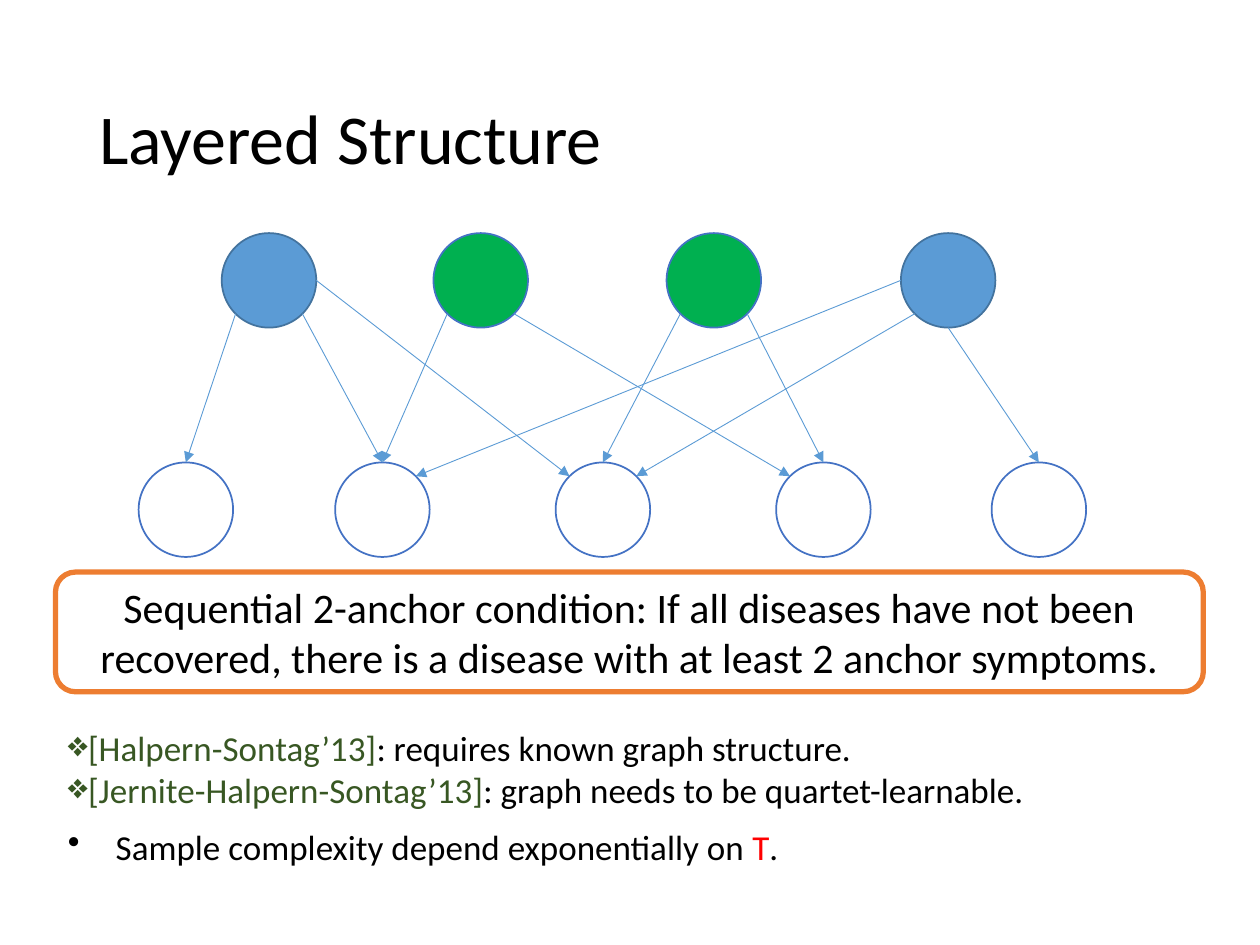
from math import cos, radians, sin

from lxml import etree
from pptx import Presentation
from pptx.dml.color import RGBColor
from pptx.enum import shapes, text
from pptx.oxml.ns import qn
from pptx.util import Inches, Pt

COLORS = {
    "black": "000000", "white": "FFFFFF", "blue": "5B9BD5",
    "dark_blue": "43739E", "outline": "4472C4", "green": "00B050",
    "orange": "ED7D31", "citation": "385723", "red": "FF0000",
}
FONT = "Calibri"

TITLE = "Layered Structure"
CONDITION = ("Sequential 2-anchor condition: If all diseases have not been "
             "recovered, there is a disease with at least 2 anchor symptoms.")
RELATED_WORK = [
    [("[Halpern-Sontag’13]", "citation"),
     (": requires known graph structure.", "black")],
    [("[Jernite-Halpern-Sontag’13]", "citation"),
     (": graph needs to be quartet-learnable.", "black")],
]
COMPLEXITY = [[("Sample complexity depend exponentially on ", "black"),
               ("T", "red"), (".", "black")]]

# Circles: left edge, fill, outline
DIAMETER = 0.75
DISEASE_TOP, SYMPTOM_TOP = 1.85, 3.67
DISEASES = [(1.76, "blue", "dark_blue"), (3.44, "green", "outline"),
            (5.29, "green", "outline"), (7.15, "blue", "dark_blue")]
SYMPTOMS = [(left, "white", "outline") for left in (1.1, 2.66, 4.41, 6.16, 7.87)]

# Points on a circle, in degrees clockwise from the right
ANGLES = {"right": 0, "lower right": 45, "bottom": 90, "lower left": 135,
          "left": 180, "upper left": 225, "top": 270, "upper right": 315}
# Disease, where the arrow leaves, symptom, where it arrives
EDGES = [
    (0, "lower left", 0, "top"), (0, "lower right", 1, "top"),
    (0, "right", 2, "upper left"), (1, "lower left", 1, "top"),
    (1, "lower right", 3, "upper left"), (2, "lower right", 3, "top"),
    (3, "lower left", 2, "upper right"), (3, "bottom", 4, "top"),
    (3, "left", 1, "upper right"), (2, "lower left", 2, "top"),
]


def color(name):
    return RGBColor.from_string(COLORS[name])


def inches(*values):
    return [Inches(value) for value in values]


def set_font(para, size):
    para.font.name = FONT
    para.font.size = Pt(size)
    para.font.color.rgb = color("black")


def add_outlined(page, kind, place, fill, line, width):
    shape = page.shapes.add_shape(kind, *inches(*place))
    shape.shadow.inherit = False
    shape.fill.solid()
    shape.fill.fore_color.rgb = color(fill)
    shape.line.color.rgb = color(line)
    shape.line.width = Pt(width)
    return shape


def add_circles(page, circles, top):
    for left, fill, line in circles:
        add_outlined(page, shapes.MSO_SHAPE.OVAL,
                     (left, top, DIAMETER, DIAMETER), fill, line, 1)


def rim_point(left, top, side):
    angle, radius = radians(ANGLES[side]), DIAMETER / 2
    return inches(left + radius * (1 + cos(angle)), top + radius * (1 + sin(angle)))


def add_arrow(page, start, end):
    arrow = page.shapes.add_connector(shapes.MSO_CONNECTOR.STRAIGHT, *start, *end)
    arrow.line.color.rgb = color("blue")
    arrow.line.width = Pt(0.5)
    etree.SubElement(arrow.line._get_or_add_ln(), qn("a:tailEnd"), type="triangle")
    etree.SubElement(arrow._element.spPr, qn("a:effectLst"))


def add_bullets(page, place, lines, bullet, indent=0.0, wrap=True):
    box = page.shapes.add_textbox(*inches(*place))
    frame = box.text_frame
    frame.word_wrap = wrap
    frame.auto_size = text.MSO_AUTO_SIZE.SHAPE_TO_FIT_TEXT
    for index, spans in enumerate(lines):
        para = frame.add_paragraph() if index else frame.paragraphs[0]
        set_font(para, 20)
        for words, name in spans:
            span = para.add_run()
            span.text = words
            span.font.color.rgb = color(name)
        properties = para._p.get_or_add_pPr()
        properties.set("marL", str(Inches(indent)))
        properties.set("indent", str(-Inches(indent)))
        mark = etree.Element(qn("a:buChar"), char=bullet)
        properties.insert(0, mark)


def main():
    deck = Presentation()
    deck.slide_width, deck.slide_height = inches(10, 7.5)
    page = deck.slides.add_slide(deck.slide_layouts[6])

    title = page.shapes.add_textbox(*inches(0.69, 0.4, 8.62, 1.45)).text_frame
    title.word_wrap = True
    title.vertical_anchor = text.MSO_ANCHOR.MIDDLE
    title.text = TITLE
    title.paragraphs[0].line_spacing = 0.9
    set_font(title.paragraphs[0], 40)

    add_circles(page, DISEASES, DISEASE_TOP)
    add_circles(page, SYMPTOMS, SYMPTOM_TOP)
    for disease, leaves, symptom, arrives in EDGES:
        add_arrow(page, rim_point(DISEASES[disease][0], DISEASE_TOP, leaves),
                  rim_point(SYMPTOMS[symptom][0], SYMPTOM_TOP, arrives))

    condition = add_outlined(page, shapes.MSO_SHAPE.ROUNDED_RECTANGLE,
                             (0.44, 4.54, 9.11, 0.95), "white", "orange", 3).text_frame
    condition.word_wrap = True
    condition.vertical_anchor = text.MSO_ANCHOR.MIDDLE
    condition.text = CONDITION
    condition.paragraphs[0].alignment = text.PP_ALIGN.CENTER
    set_font(condition.paragraphs[0], 24)

    add_bullets(page, (0.44, 5.72, 9.28, 0.77), RELATED_WORK, "❖")
    add_bullets(page, (0.44, 6.5, 5.86, 0.44), COMPLEXITY, "•", 0.38, wrap=False)
    deck.save("out.pptx")


if __name__ == "__main__":
    main()
